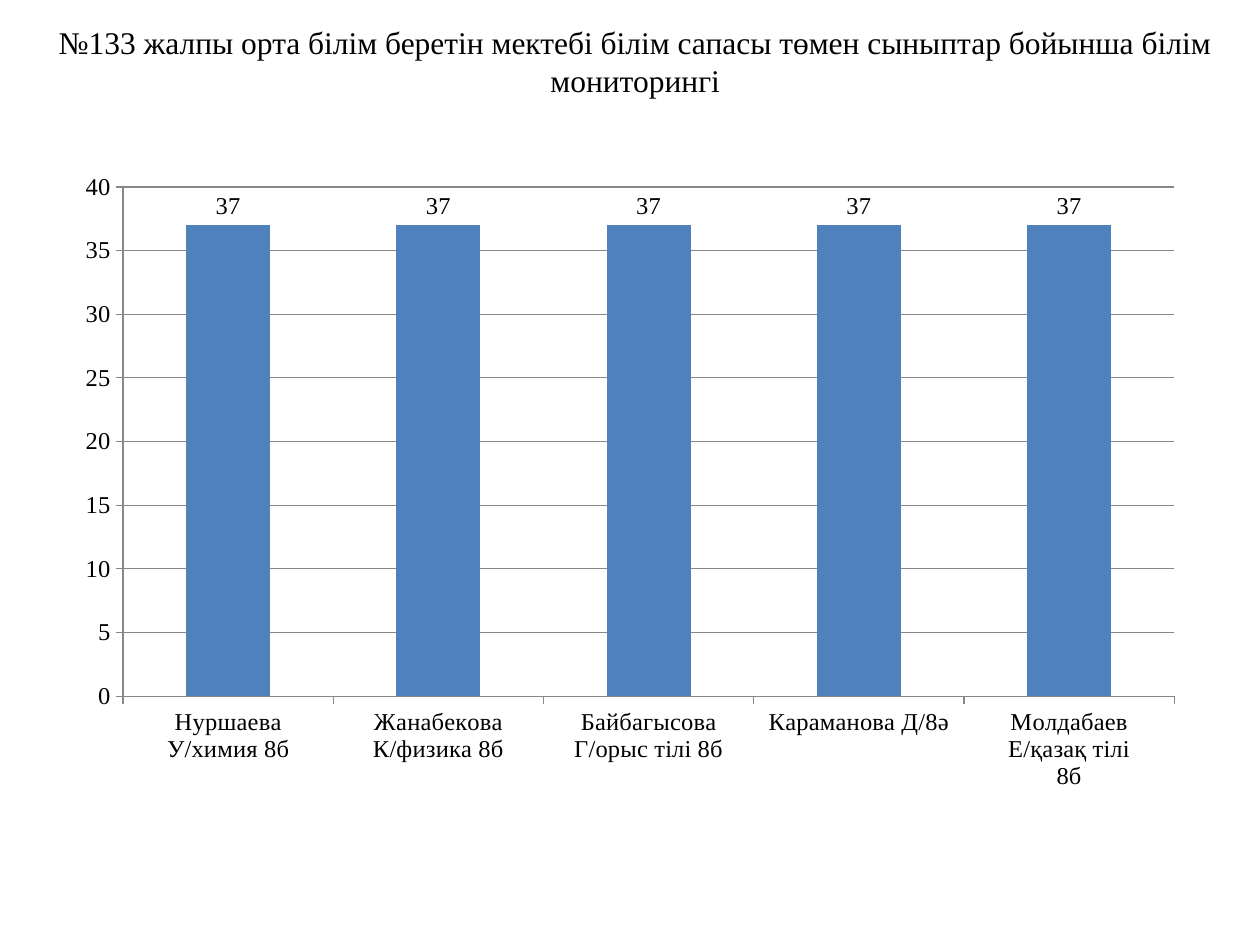
from pptx import Presentation
from pptx.chart.data import CategoryChartData
from pptx.dml.color import RGBColor
from pptx.enum.chart import XL_CHART_TYPE, XL_LABEL_POSITION, XL_TICK_MARK
from pptx.enum.text import MSO_ANCHOR, MSO_AUTO_SIZE, PP_ALIGN
from pptx.util import Pt

COLUMN = XL_CHART_TYPE.COLUMN_CLUSTERED
OUTSIDE_END = XL_LABEL_POSITION.OUTSIDE_END
TICK_OUT = XL_TICK_MARK.OUTSIDE
TICK_NONE = XL_TICK_MARK.NONE
TOP = MSO_ANCHOR.TOP
GROW = MSO_AUTO_SIZE.SHAPE_TO_FIT_TEXT
CENTER = PP_ALIGN.CENTER

FONT = "Times New Roman"
BLACK = "000000"
GRAY = "878787"
BLUE = "4F81BD"

TITLE = ("№133 жалпы орта білім беретін мектебі білім сапасы төмен "
         "сыныптар бойынша білім мониторингі")
SCORES = {
    "Нуршаева У/химия 8б": 37,
    "Жанабекова К/физика 8б": 37,
    "Байбагысова Г/орыс тілі 8б": 37,
    "Караманова Д/8ә": 37,
    "Молдабаев Е/қазақ тілі 8б": 37,
}


def rgb(color):
    return RGBColor.from_string(color)


def set_font(font, size):
    font.name = FONT
    font.size = Pt(size)
    font.bold = False
    font.color.rgb = rgb(BLACK)


def set_line(line):
    line.color.rgb = rgb(GRAY)
    line.width = Pt(0.75)


def add_title(s, text, left, top, width, height):
    sp = s.shapes.title
    sp.left, sp.top, sp.width, sp.height = Pt(left), Pt(top), Pt(width), Pt(height)
    tf = sp.text_frame
    tf.text = text
    tf.word_wrap = True
    tf.auto_size = GROW
    tf.vertical_anchor = TOP
    p = tf.paragraphs[0]
    p.alignment = CENTER
    set_font(p.font, 18)


def format_axis(axis):
    axis.major_tick_mark = TICK_OUT
    axis.minor_tick_mark = TICK_NONE
    set_font(axis.tick_labels.font, 14)
    set_line(axis.format.line)


def add_column_chart(s, scores, left, top, width, height):
    data = CategoryChartData()
    data.categories = list(scores)
    data.add_series("Series 1", list(scores.values()))
    chart = s.shapes.add_chart(
        COLUMN, Pt(left), Pt(top), Pt(width), Pt(height), data).chart
    set_font(chart.font, 18)
    chart.has_title = False
    chart.has_legend = False

    format_axis(chart.category_axis)
    axis = chart.value_axis
    format_axis(axis)
    axis.minimum_scale = 0
    axis.maximum_scale = 40
    axis.major_unit = 5
    axis.has_major_gridlines = True
    set_line(axis.major_gridlines.format.line)

    plot = chart.plots[0]
    plot.gap_width = 150
    plot.vary_by_categories = False
    series = plot.series[0]
    series.format.fill.solid()
    series.format.fill.fore_color.rgb = rgb(BLUE)
    labels = series.data_labels
    labels.show_value = True
    labels.position = OUTSIDE_END
    set_font(labels.font, 14)


def main():
    prs = Presentation()
    prs.slide_width, prs.slide_height = Pt(720), Pt(540)
    s = prs.slides.add_slide(prs.slide_layouts[5])
    add_title(s, TITLE, 20, 9.5, 686, 51)
    add_column_chart(s, SCORES, 36, 92, 648, 356.5)
    prs.save("out.pptx")


if __name__ == "__main__":
    main()
